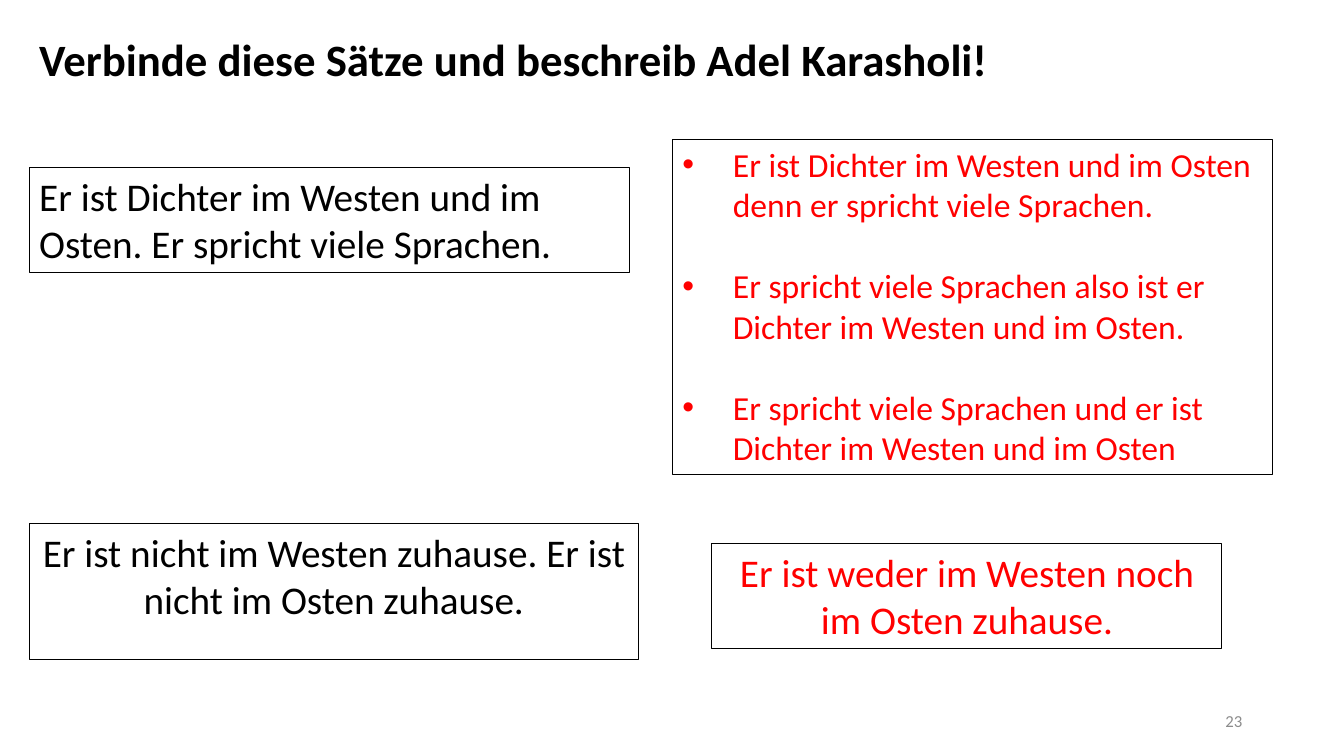
from lxml import etree
from pptx import Presentation
from pptx.dml.color import RGBColor
from pptx.enum.shapes import MSO_SHAPE
from pptx.enum.text import MSO_ANCHOR, PP_ALIGN
from pptx.oxml.ns import qn
from pptx.util import Inches, Pt

RECT = MSO_SHAPE.RECTANGLE
TOP, MIDDLE = MSO_ANCHOR.TOP, MSO_ANCHOR.MIDDLE
LEFT, CENTER, RIGHT = PP_ALIGN.LEFT, PP_ALIGN.CENTER, PP_ALIGN.RIGHT

COLORS = {"ink": "000000", "answer": "FF0000", "muted": "8C8C8C"}
FONT = "Calibri"
WIDTH, HEIGHT = Inches(13.33), Inches(7.5)
MARGIN = 2.18
CARD_W, CARD_H = 44.64, 13.87

ANSWERS = [
    "Er ist Dichter im Westen und im Osten denn er spricht viele Sprachen.",
    "Er spricht viele Sprachen also ist er Dichter im Westen und im Osten.",
    "Er spricht viele Sprachen und er ist Dichter im Westen und im Osten",
]


def place(box):
    x, y, w, h = (share / 100 for share in box)
    return int(x * WIDTH), int(y * HEIGHT), int(w * WIDTH), int(h * HEIGHT)


def add_bullet(p):
    pPr = p._p.get_or_add_pPr()
    pPr.set("marL", str(Inches(0.5)))
    pPr.set("indent", str(-Inches(0.5)))
    etree.SubElement(pPr, qn("a:buFont")).set("typeface", "Arial")
    etree.SubElement(pPr, qn("a:buChar")).set("char", "•")


def write(sp, lines, size=28, color="ink", bold=False, align=LEFT,
          anchor=TOP, spacing=None, bullets=False, gap=0):
    tf = sp.text_frame
    tf.word_wrap = True
    tf.vertical_anchor = anchor
    for i, line in enumerate(lines):
        p = tf.paragraphs[0] if i == 0 else tf.add_paragraph()
        p.alignment = align
        if spacing:
            p.line_spacing = spacing
        if i and gap:
            p.space_before = Pt(gap)
        if bullets:
            add_bullet(p)
        r = p.add_run()
        r.text = line
        r.font.name = FONT
        r.font.size = Pt(size)
        r.font.bold = bold
        r.font.color.rgb = RGBColor.from_string(COLORS[color])


def add_label(s, box, text, **style):
    sp = s.shapes.add_textbox(*place(box))
    write(sp, [text], anchor=MIDDLE, **style)


def add_card(s, box, lines, **style):
    sp = s.shapes.add_shape(RECT, *place(box))
    sp.shadow.inherit = False
    sp.fill.background()
    sp.line.color.rgb = RGBColor.from_string(COLORS["ink"])
    sp.line.width = Pt(0.75)
    write(sp, lines, **style)


def build_exercise(prs):
    s = prs.slides.add_slide(prs.slide_layouts[6])
    add_label(s, (MARGIN, 3.33, 85.75, 9.73),
              "Verbinde diese Sätze und beschreib Adel Karasholi!",
              size=32, bold=True, spacing=0.9)
    add_label(s, (70.67, 92.67, 22.5, 5.33), "23",
              size=12, color="muted", align=RIGHT)
    add_card(s, (MARGIN, 22.13, CARD_W, CARD_H),
             ["Er ist Dichter im Westen und im Osten. Er spricht viele Sprachen."])
    add_card(s, (MARGIN, 69.2, 45.31, 18),
             ["Er ist nicht im Westen zuhause. Er ist nicht im Osten zuhause."],
             align=CENTER)
    add_card(s, (50.04, 18.4, CARD_W, 44.4), ANSWERS,
             size=24, color="answer", bullets=True, gap=29)
    add_card(s, (52.96, 71.87, 37.96, CARD_H),
             ["Er ist weder im Westen noch im Osten zuhause."],
             color="answer", align=CENTER)


def main():
    prs = Presentation()
    prs.slide_width, prs.slide_height = WIDTH, HEIGHT
    build_exercise(prs)
    prs.save("out.pptx")


if __name__ == "__main__":
    main()
